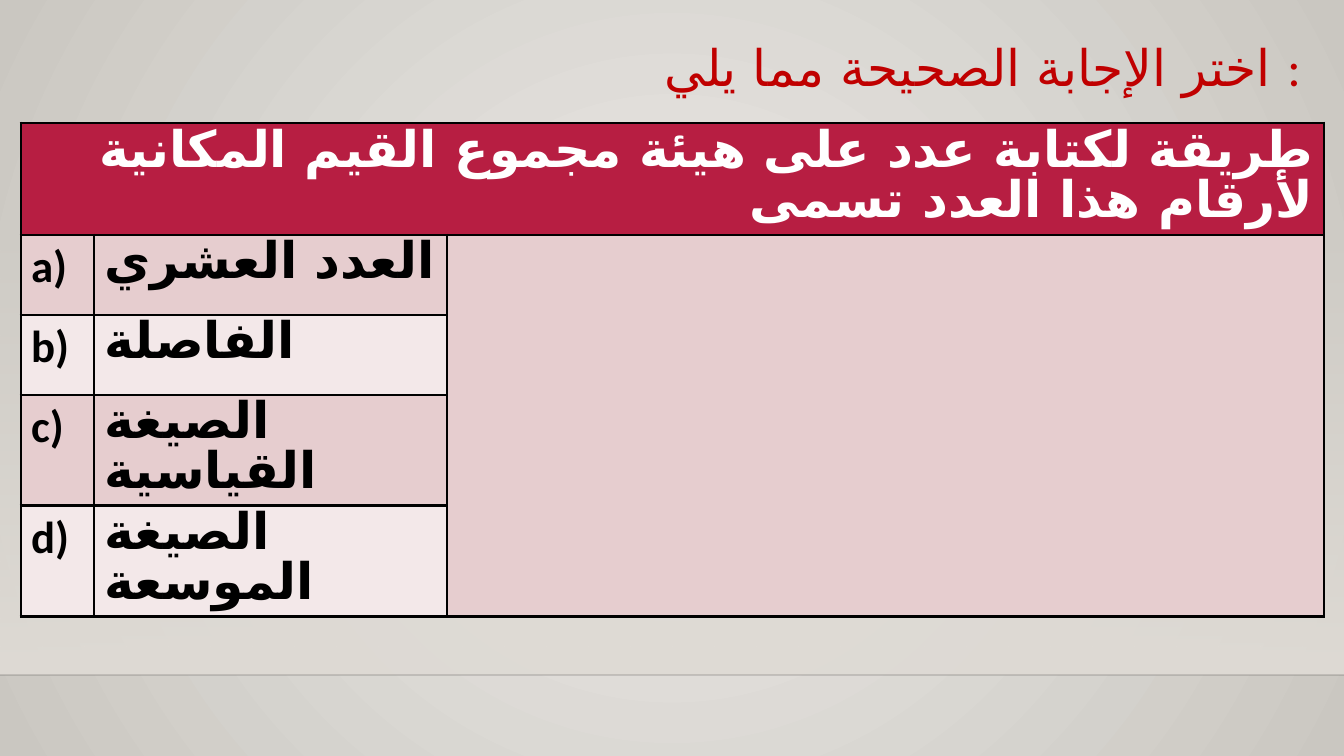
from lxml.etree import SubElement
from pptx import Presentation
from pptx.dml.color import RGBColor
from pptx.enum.shapes import MSO_CONNECTOR, MSO_SHAPE
from pptx.enum.text import MSO_ANCHOR, MSO_AUTO_SIZE, PP_ALIGN
from pptx.oxml.ns import qn
from pptx.util import Pt

SLIDE_WIDTH, SLIDE_HEIGHT = 1344, 756
EMU_PER_PX = 12192000 / SLIDE_WIDTH
FONT, ARABIC_FONT = "Calibri", "DejaVu Sans"
COLORS = {
    "center": "ECEAE7", "edge": "CAC7C1", "wall": "DFDBD5", "horizon": "000001",
    "title": "C00000", "header": "B71E42", "header_text": "FFFFFF",
    "text": "000000", "border": "000000", "odd": "E6CDCF", "even": "F3E8E9",
}
TITLE = "اختر الإجابة الصحيحة مما يلي :"
QUESTION = "طريقة لكتابة عدد على هيئة مجموع القيم المكانية لأرقام هذا العدد تسمى"
ANSWERS = [
    ("a)", "العدد العشري"),
    ("b)", "الفاصلة"),
    ("c)", "الصيغة القياسية"),
    ("d)", "الصيغة الموسعة"),
]
COLUMN_WIDTHS = [73, 353, 877]
HEADER_HEIGHT, ANSWER_HEIGHT = 112, 80


def px(length):
    return round(length * EMU_PER_PX)


def rgb(name):
    return RGBColor.from_string(COLORS[name])


def set_attributes(target, values):
    for name, value in values.items():
        setattr(target, name, value)


def set_alpha(color_element, percent):
    SubElement(color_element, qn("a:alpha"), val=str(percent * 1000))


def set_gradient(fill, first, last):
    fill.gradient()
    for stop, name in zip(fill.gradient_stops, (first, last)):
        stop.color.rgb = rgb(name)


def write_text(text_frame, text, size, color, bold=False, **paragraph_format):
    paragraph = text_frame.paragraphs[0]
    set_attributes(paragraph, paragraph_format)
    run = paragraph.add_run()
    run.text = text
    set_attributes(run.font, {"name": FONT, "size": Pt(size), "bold": bold})
    run.font.color.rgb = rgb(color)
    SubElement(run.font._element, qn("a:cs"), typeface=ARABIC_FONT)
    return paragraph


def add_backdrop(slide, left, top, width, height):
    set_gradient(slide.background.fill, "center", "edge")
    gradient = slide._element.xpath("./p:cSld/p:bg//a:gradFill")[0]
    gradient.remove(gradient.find(qn("a:lin")))
    path = SubElement(gradient, qn("a:path"), {"path": "circle"})
    sides = dict.fromkeys("ltrb", "50000")
    SubElement(path, qn("a:fillToRect"), sides)

    wall = slide.shapes.add_shape(
        MSO_SHAPE.RECTANGLE, px(left), px(top), px(width), px(height))
    wall.shadow.inherit = False
    wall.line.fill.background()
    set_gradient(wall.fill, "wall", "wall")
    wall.fill.gradient_angle = 270
    set_alpha(wall._element.xpath(".//a:gs/a:srgbClr")[0], 0)

    horizon = slide.shapes.add_connector(
        MSO_CONNECTOR.STRAIGHT, px(left), px(top + height),
        px(left + width), px(top + height))
    horizon.line.width = Pt(1)
    horizon.line.color.rgb = rgb("horizon")
    set_alpha(horizon._element.xpath(".//a:ln//a:srgbClr")[0], 20)
    SubElement(horizon._element.spPr, qn("a:effectLst"))


def add_title(slide, left, top, width, height):
    title = slide.shapes.title
    set_attributes(title, {"left": px(left), "top": px(top),
                           "width": px(width), "height": px(height)})
    set_attributes(title.text_frame, {
        "word_wrap": True, "auto_size": MSO_AUTO_SIZE.NONE,
        "vertical_anchor": MSO_ANCHOR.BOTTOM,
        "margin_left": px(10), "margin_right": px(10),
        "margin_top": px(5), "margin_bottom": 0,
    })
    write_text(title.text_frame, TITLE, 36, "title",
               alignment=PP_ALIGN.RIGHT, line_spacing=0.9)


def format_cell(cell, color):
    properties = cell._tc.get_or_add_tcPr()
    for side in ("lnL", "lnR", "lnT", "lnB"):
        line = SubElement(properties, qn(f"a:{side}"), w=str(Pt(2.25)))
        solid = SubElement(line, qn("a:solidFill"))
        SubElement(solid, qn("a:srgbClr"), val=COLORS["border"])
    cell.fill.solid()
    cell.fill.fore_color.rgb = rgb(color)


def add_question(slide, left, top):
    heights = [HEADER_HEIGHT] + [ANSWER_HEIGHT] * len(ANSWERS)
    table = slide.shapes.add_table(
        len(heights), len(COLUMN_WIDTHS), px(left), px(top),
        px(sum(COLUMN_WIDTHS)), px(sum(heights))).table
    for column, width in zip(table.columns, COLUMN_WIDTHS):
        column.width = px(width)
    for index, (row, height) in enumerate(zip(table.rows, heights)):
        row.height = px(height)
        for cell in row.cells:
            format_cell(cell, "header" if index == 0 else "odd" if index % 2 else "even")

    header = table.cell(0, 0)
    header.merge(table.cell(0, 2))
    table.cell(1, 2).merge(table.cell(len(ANSWERS), 2))
    header.vertical_anchor = MSO_ANCHOR.MIDDLE
    question = write_text(header.text_frame, QUESTION, 36, "header_text", True,
                          alignment=PP_ALIGN.RIGHT, line_spacing=Pt(36))
    question._p.get_or_add_pPr().set("rtl", "1")
    for index, (letter, answer) in enumerate(ANSWERS, 1):
        write_text(table.cell(index, 0).text_frame, letter, 32, "text", True)
        write_text(table.cell(index, 1).text_frame, answer, 36, "text", True,
                   line_spacing=Pt(36))


def main():
    presentation = Presentation()
    set_attributes(presentation, {"slide_width": px(SLIDE_WIDTH),
                                  "slide_height": px(SLIDE_HEIGHT)})
    slide = presentation.slides.add_slide(presentation.slide_layouts[5])
    add_backdrop(slide, 0, 223, SLIDE_WIDTH, 452)
    add_title(slide, 640, 15, 671, 82)
    add_question(slide, 21, 123)
    presentation.save("out.pptx")


if __name__ == "__main__":
    main()
